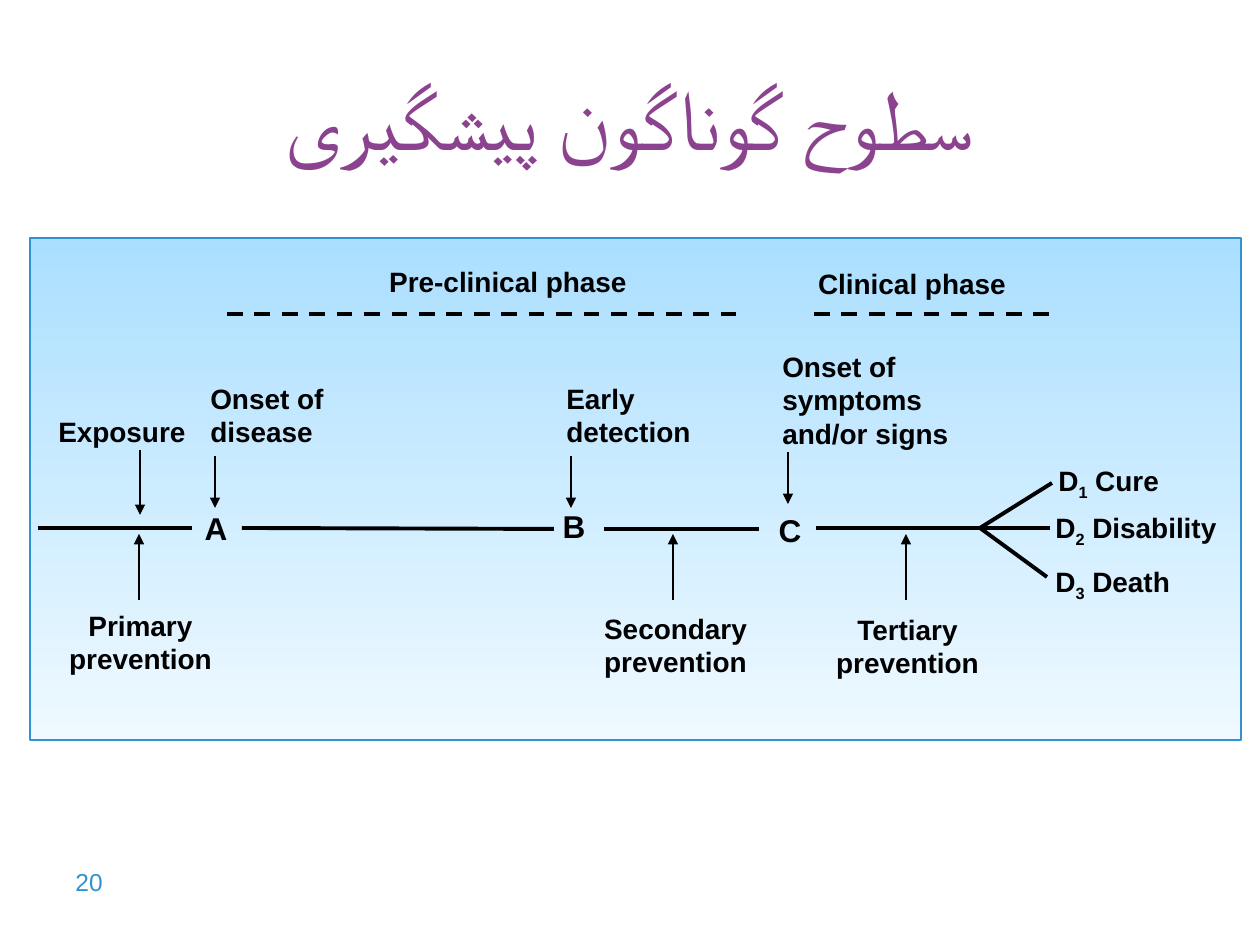
from dataclasses import dataclass

from lxml.etree import SubElement
from pptx import Presentation
from pptx.dml.color import RGBColor as RGB
from pptx.enum.dml import MSO_LINE as Dash
from pptx.enum.shapes import MSO_CONNECTOR as Conn, MSO_SHAPE as Shape
from pptx.enum.text import MSO_ANCHOR as Anchor, PP_ALIGN as Align
from pptx.oxml.ns import qn
from pptx.util import Pt

EMU_PER_PX = 914400 / 126


@dataclass(frozen=True)
class Theme:
    ink: RGB = RGB(0x00, 0x00, 0x00)
    blue: RGB = RGB(0x30, 0x92, 0xD1)
    purple: RGB = RGB(0x8C, 0x43, 0x8F)
    panel_top: RGB = RGB(0xAB, 0xDF, 0xFF)
    panel_bottom: RGB = RGB(0xEF, 0xF9, 0xFF)
    body_font: str = "Arial"
    title_font: str = "Cambria"
    title: int = 48
    letter: int = 18
    label: int = 16
    number: int = 14
    axis: float = 2.25
    arrow: float = 1.5


THEME = Theme()

# Labels: text, left, top, width, height
CENTERED = [
    ("Pre-clinical phase", 300, 258, 416, 47),
    ("Clinical phase", 733, 260, 358, 47),
    ("Exposure", 40, 408, 164, 47),
    ("Primary prevention", 38, 602, 205, 81),
    ("Secondary prevention", 573, 605, 205, 81),
    ("Tertiary prevention", 805, 606, 205, 81),
]
EVENTS = [
    ("Onset of disease", 198, 375, 242, 81),
    ("Early detection", 554, 375, 190, 81),
    ("Onset of symptoms and/or signs", 770, 343, 242, 113),
]
STAGES = [("A", 190, 503), ("B", 548, 501), ("C", 764, 505)]
OUTCOMES = [("1", " Cure", 1046, 457),
            ("2", " Disability", 1043, 504),
            ("3", " Death", 1043, 558)]

# Lines: x1, y1, x2, y2
TIMELINE = [(38, 528, 192, 528), (242, 528, 554, 529),
            (604, 529, 759, 529), (816, 528, 1050, 528)]
BRANCHES = [(980, 528, 1052, 483), (980, 528, 1047, 577)]
PHASES = [(227, 314, 748, 314), (814, 314, 1053, 314)]
# Arrows: x, start y, end y
EVENT_ARROWS = [(140, 450, 515), (215, 456, 508),
                (571, 456, 508), (788, 452, 504)]
PREVENTION_ARROWS = [(x, 600, 534) for x in (139, 673, 906)]


def px(*values):
    return [round(v * EMU_PER_PX) for v in values]


def add_text(slide, runs, box, size=THEME.label, color=THEME.ink,
             font=THEME.body_font, bold=True, align=Align.LEFT,
             anchor=Anchor.TOP):
    """Add a one-paragraph text box and return its runs."""
    tf = slide.shapes.add_textbox(*px(*box)).text_frame
    tf.word_wrap = True
    tf.vertical_anchor = anchor
    p = tf.paragraphs[0]
    p.alignment = align
    p.font.name, p.font.size, p.font.bold = font, Pt(size), bold
    p.font.color.rgb = color
    for text in runs:
        p.add_run().text = text
    return p.runs


def add_outcome(slide, index, text, left, top):
    runs = add_text(slide, ["D", index, text], (left, top, 200, 47))
    runs[1].font._element.set("baseline", "-25000")


def add_line(slide, points, width=THEME.axis, dashed=False, arrow=False):
    line = slide.shapes.add_connector(Conn.STRAIGHT, *px(*points))
    line.line.color.rgb = THEME.ink
    line.line.width = Pt(width)
    if dashed:
        line.line.dash_style = Dash.DASH
    sp_pr = line._element.spPr
    if arrow:
        SubElement(sp_pr.find(qn("a:ln")), qn("a:tailEnd"), type="triangle")
    SubElement(sp_pr, qn("a:effectLst"))


def add_panel(slide):
    panel = slide.shapes.add_shape(Shape.RECTANGLE, *px(30, 238, 1211, 502))
    panel.shadow.inherit = False
    panel.fill.gradient()
    panel.fill.gradient_angle = 270
    stops = panel.fill.gradient_stops
    for stop, color in zip(stops, (THEME.panel_top, THEME.panel_bottom)):
        stop.color.rgb = color
    panel.line.color.rgb = THEME.blue
    panel.line.width = Pt(1)


def main():
    prs = Presentation()
    prs.slide_width, prs.slide_height = px(1260, 945)
    slide = prs.slides.add_slide(prs.slide_layouts[6])

    # Title, panel and slide number
    add_panel(slide)
    add_text(slide, ["سطوح گوناگون پیشگیری"], (63, 38, 1134, 158),
             THEME.title, THEME.purple, THEME.title_font, False,
             Align.CENTER, Anchor.MIDDLE)
    add_text(slide, ["20"], (63, 861, 294, 66), THEME.number, THEME.blue,
             bold=False)

    # Timeline, branches and phase spans
    for points in TIMELINE + BRANCHES:
        add_line(slide, points)
    for points in PHASES:
        add_line(slide, points, dashed=True)
    for x, start, end in EVENT_ARROWS + PREVENTION_ARROWS:
        add_line(slide, (x, start, x, end), THEME.arrow, arrow=True)

    # Labels
    for text, *box in CENTERED:
        add_text(slide, [text], box, align=Align.CENTER)
    for text, *box in EVENTS:
        add_text(slide, [text], box)
    for letter, left, top in STAGES:
        add_text(slide, [letter], (left, top, 52, 50), THEME.letter,
                 align=Align.CENTER)
    for outcome in OUTCOMES:
        add_outcome(slide, *outcome)

    prs.save("out.pptx")


if __name__ == "__main__":
    main()
